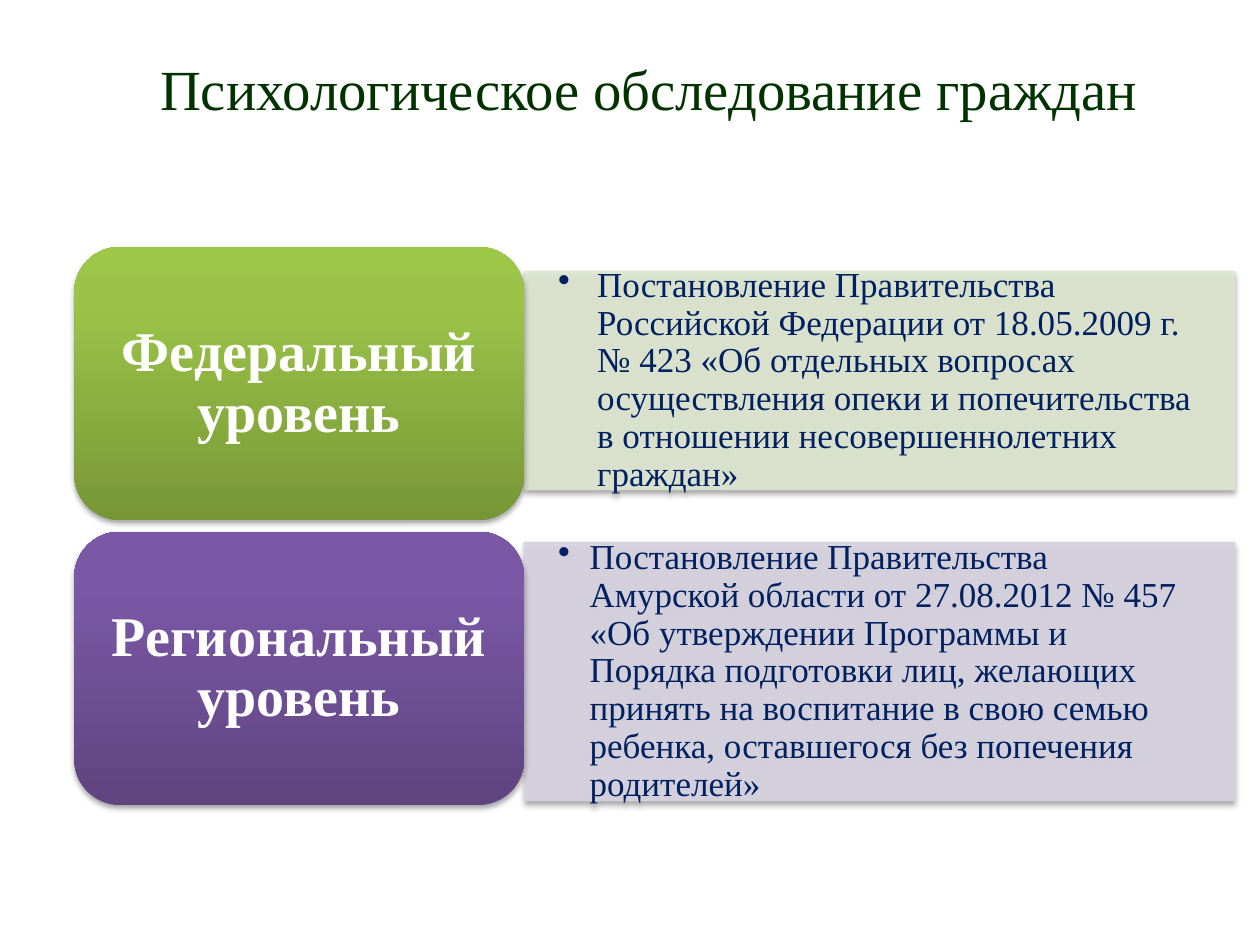
from lxml import etree
from pptx import Presentation
from pptx import util as u
from pptx.dml.color import RGBColor
from pptx.enum import shapes, text
from pptx.oxml import ns

FONT = "Times New Roman"
TITLE_GREEN = RGBColor(0x00, 0x33, 0x00)
NAVY = RGBColor(0x00, 0x20, 0x60)
WHITE = RGBColor(0xFF, 0xFF, 0xFF)
PALE_GREEN = RGBColor(0xDE, 0xE7, 0xD1)
PALE_PURPLE = RGBColor(0xD8, 0xD3, 0xE0)
GREENS = [RGBColor(0x77, 0x97, 0x37), RGBColor(0x9B, 0xC3, 0x48), RGBColor(0x9D, 0xC7, 0x46)]
PURPLES = [RGBColor(0x5F, 0x44, 0x80), RGBColor(0x7B, 0x58, 0xA6), RGBColor(0x7C, 0x57, 0xA8)]

presentation = Presentation()
presentation.slide_width, presentation.slide_height = u.Inches(10), u.Inches(7.5)
slide = presentation.slides.add_slide(presentation.slide_layouts[6])

# Grid: 100 columns by 100 rows
COLUMN = presentation.slide_width / 100
ROW = presentation.slide_height / 100
LABEL_LEFT, LABEL_WIDTH, LABEL_HEIGHT = 5.9, 35.7, 28.93
LABEL_TOP, LABEL_STEP = 26.13, 30.13
PANEL_LEFT, PANEL_WIDTH = 41.6, 56.4


def add_xml(parent, tag, children="", **attributes):
    values = " ".join(f'{name}="{value}"' for name, value in attributes.items())
    parent.append(etree.fromstring(
        f'<a:{tag} xmlns:a="{ns.nsuri("a")}" {values}>{children}</a:{tag}>'))


def write(shape, words, margins, anchor, alignment, spacing, font, bullet_indent=None):
    frame = shape.text_frame
    frame.word_wrap = True
    frame.vertical_anchor = anchor
    for side, margin in zip(("left", "top", "right", "bottom"), margins):
        setattr(frame, f"margin_{side}", u.Inches(margin))
    paragraph = frame.paragraphs[0]
    paragraph.text = words
    paragraph.alignment = alignment
    paragraph.line_spacing = spacing
    if bullet_indent:
        paragraph.level = 1
        properties = paragraph._p.get_or_add_pPr()
        properties.set("marL", str(u.Inches(bullet_indent)))
        properties.set("indent", str(-u.Inches(bullet_indent)))
        add_xml(properties, "buChar", char="•")
    run_font = paragraph.runs[0].font
    run_font.color.rgb = font["color"]
    for name in ("name", "size", "bold"):
        setattr(run_font, name, font[name])


# Title
title = slide.shapes.add_textbox(*map(int, (6.7 * COLUMN, 4.4 * ROW, 90.8 * COLUMN, 16.67 * ROW)))
write(title, "Психологическое обследование граждан", (0.1, 0.1, 0.22, 0.05),
      text.MSO_ANCHOR.TOP, text.PP_ALIGN.CENTER, 1,
      {"name": FONT, "size": u.Pt(32.4), "bold": False, "color": TITLE_GREEN})

# Levels: label, its gradient, panel text, panel colour, panel top and height, bullet indent
levels = [
    ("Федеральный уровень", GREENS,
     "Постановление Правительства Российской Федерации от 18.05.2009 г. № 423 "
     "«Об отдельных вопросах осуществления опеки и попечительства в отношении "
     "несовершеннолетних граждан»", PALE_GREEN, 28.73, 23.07, 0.31),
    ("Региональный уровень", PURPLES,
     "Постановление Правительства Амурской области от 27.08.2012 № 457 "
     "«Об утверждении Программы и Порядка подготовки лиц, желающих принять на "
     "воспитание в свою семью ребенка, оставшегося без попечения родителей»",
     PALE_PURPLE, 57.4, 27.33, 0.25),
]

for index, (name, shades, decree, tint, panel_top, panel_height, indent) in enumerate(levels):
    # Panel with the decree
    panel = slide.shapes.add_shape(shapes.MSO_SHAPE.RECTANGLE, *map(int, (
        PANEL_LEFT * COLUMN, panel_top * ROW, PANEL_WIDTH * COLUMN, panel_height * ROW)))
    panel.fill.solid()
    panel.fill.fore_color.rgb = tint
    panel.line.color.rgb = tint
    panel.line.width = u.Pt(0.75)
    for color in panel._element.spPr.iter(ns.qn("a:srgbClr")):
        add_xml(color, "alpha", val=90000)
    write(panel, decree, (0.27, 0.14, 0.27, 0.14), text.MSO_ANCHOR.MIDDLE,
          text.PP_ALIGN.LEFT, 0.9,
          {"name": FONT, "size": u.Pt(20), "bold": False, "color": NAVY}, indent)

    # Label with a gradient running from bottom to top
    label = slide.shapes.add_shape(shapes.MSO_SHAPE.ROUNDED_RECTANGLE, *map(int, (
        LABEL_LEFT * COLUMN, (LABEL_TOP + index * LABEL_STEP) * ROW,
        LABEL_WIDTH * COLUMN, LABEL_HEIGHT * ROW)))
    stops = "".join(f'<a:gs pos="{share * 1000}"><a:srgbClr val="{shade}"/></a:gs>'
                    for share, shade in zip((0, 80, 100), shades))
    add_xml(label._element.spPr, "gradFill",
            f'<a:gsLst>{stops}</a:gsLst><a:lin ang="16200000" scaled="0"/>', rotWithShape=1)
    label.line.fill.background()
    write(label, name, (0.13, 0.07, 0.13, 0.07), text.MSO_ANCHOR.MIDDLE,
          text.PP_ALIGN.CENTER, 0.9,
          {"name": FONT, "size": u.Pt(32), "bold": True, "color": WHITE})

    # Soft shadow below both
    for shape in (panel, label):
        shape.shadow.inherit = False
        effects = shape._element.spPr.find(ns.qn("a:effectLst"))
        add_xml(effects, "outerShdw",
                '<a:srgbClr val="000000"><a:alpha val="35000"/></a:srgbClr>',
                blurRad=u.Pt(3.1), dist=u.Pt(1.8), dir=5400000, rotWithShape=0)

presentation.save("out.pptx")
